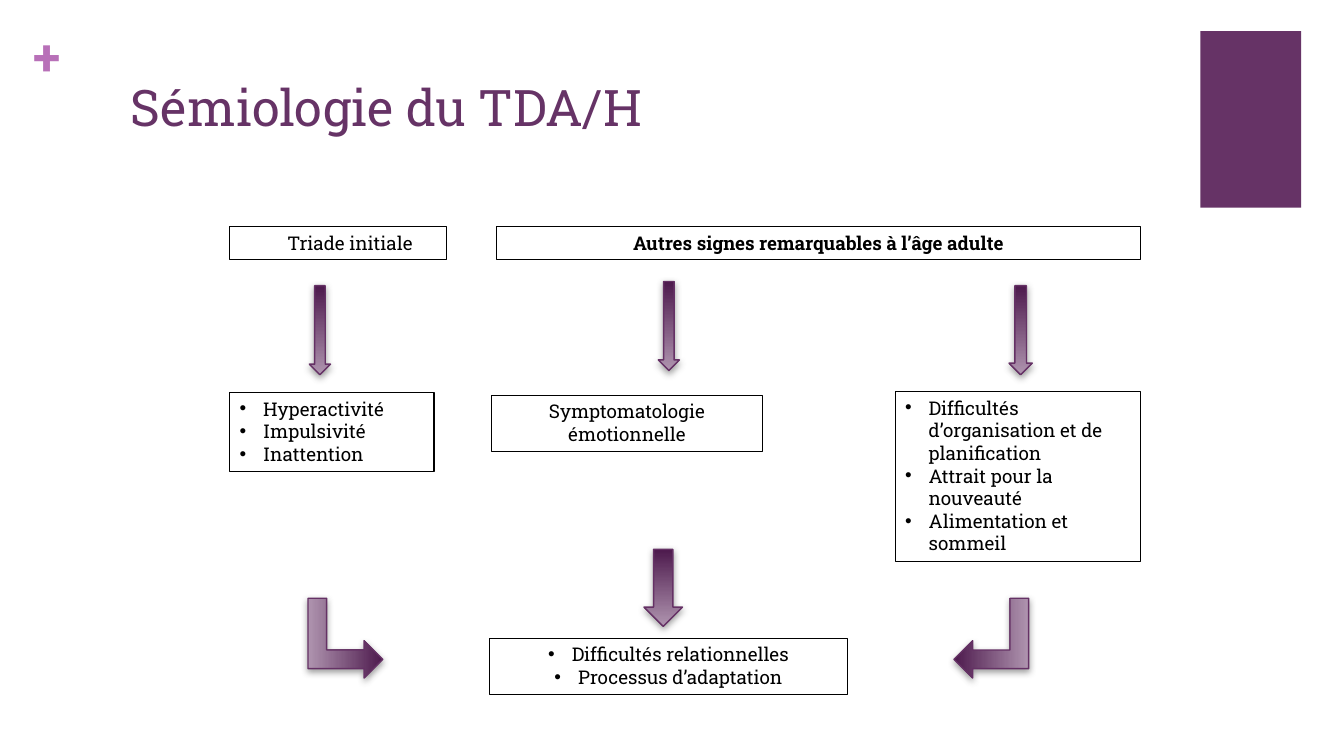
import pptx
import pptx.dml.color
import pptx.enum.shapes
import pptx.enum.text
import pptx.oxml
import pptx.oxml.ns
import pptx.util
from lxml import etree

Pt = pptx.util.Pt
RGB = pptx.dml.color.RGBColor.from_string
SHAPE = pptx.enum.shapes.MSO_SHAPE
ALIGN = pptx.enum.text.PP_ALIGN
AUTO = pptx.enum.text.MSO_AUTO_SIZE
qn = pptx.oxml.ns.qn

theme = {
    "font": "Roboto Slab", "title_size": 36, "body_size": 13.5,
    "purple": "663366", "plus": "B870B8", "black": "000000",
    "dark": "4D1A4D", "light": "AF94AF", "edge": "653165", "shadow": "808080",
}


def add_text(at, lines, size, color, bold=False, align=ALIGN.LEFT,
             bullets=False, indent=0, wrap=True):
    sp = slide.shapes.add_textbox(*map(Pt, at))
    tf = sp.text_frame
    tf.word_wrap = wrap
    tf.text = "\n".join(lines)
    for p in tf.paragraphs:
        p.alignment = align
        p.font.name = theme["font"]
        p.font.size = Pt(size)
        p.font.bold = bold
        p.font.color.rgb = RGB(color)
        pPr = p._p.get_or_add_pPr()
        pPr.set("marL", str(Pt(indent)))
        if bullets:
            pPr.set("indent", str(-Pt(indent)))
            bullet_font = etree.Element(qn("a:buFont"), typeface="Arial")
            bullet = etree.Element(qn("a:buChar"), char="•")
            pPr.insert(0, bullet_font)
            pPr.insert(1, bullet)
    return sp


def add_arrow(kind, at, rotation=0, flip=False):
    sp = slide.shapes.add_shape(kind, *map(Pt, at))
    sp.rotation = rotation
    if flip:
        sp.element.spPr.xfrm.set("flipV", "1")
    sp.fill.gradient()
    sp.fill.gradient_angle = 270
    for stop, name in zip(sp.fill.gradient_stops, ("dark", "light")):
        stop.color.rgb = RGB(theme[name])
    sp.line.color.rgb = RGB(theme["edge"])
    sp.line.width = Pt(1)
    sp.shadow.inherit = False
    effects = sp.element.spPr.find(qn("a:effectLst"))
    shadow = etree.SubElement(effects, qn("a:outerShdw"), blurRad=str(Pt(5)),
                              dist=str(Pt(2)), dir="5400000", rotWithShape="0")
    color = etree.SubElement(shadow, qn("a:srgbClr"), val=theme["shadow"])
    etree.SubElement(color, qn("a:alpha"), val="75000")


prs = pptx.Presentation()
prs.slide_width, prs.slide_height = Pt(960), Pt(540)
slide = prs.slides.add_slide(prs.slide_layouts[6])

# Corner block and plus sign
sp = slide.shapes.add_shape(SHAPE.RECTANGLE, Pt(857.5), Pt(22.3), Pt(72), Pt(126))
sp.fill.solid()
sp.fill.fore_color.rgb = RGB(theme["purple"])
sp.line.fill.background()
sp.shadow.inherit = False

sp = add_text((23.8, 18, 27.4, 43.9), ["+"], theme["title_size"], theme["plus"],
              bold=True, wrap=False)
tf = sp.text_frame
tf.margin_left = tf.margin_top = tf.margin_right = tf.margin_bottom = 0

# Title
add_text((86.4, 51.1, 696.2, 78.5), ["Sémiologie du TDA/H"],
         theme["title_size"], theme["purple"])

# Framed boxes: headings, signs, consequences
centred = {"align": ALIGN.CENTER}
listed = {"bullets": True, "indent": 16.9}
boxes = [
    ((164, 161.8, 155, 23.8), ["Triade initiale"], {**centred, "indent": 17}),
    ((354.6, 161.6, 460, 23.8), ["Autres signes remarquables à l’âge adulte"],
     {**centred, "bold": True}),
    ((164, 280.2, 146, 56.3), ["Hyperactivité", "Impulsivité", "Inattention"], listed),
    ((351, 282.2, 193.6, 40.2), ["Symptomatologie émotionnelle"], centred),
    ((639.4, 279.4, 175.2, 121.7),
     ["Difficultés d’organisation et de planification",
      "Attrait pour la nouveauté", "Alimentation et sommeil"], listed),
    ((349.6, 455.8, 255.8, 40.2),
     ["Difficultés relationnelles", "Processus d’adaptation"], {**centred, **listed}),
]
for at, lines, style in boxes:
    sp = add_text(at, lines, theme["body_size"], theme["black"], **style)
    sp.text_frame.auto_size = AUTO.SHAPE_TO_FIT_TEXT
    sp.line.color.rgb = RGB(theme["black"])
    sp.line.width = Pt(0.75)

# Straight arrows
for at in [(221, 204.1, 15.1, 63.6), (470.2, 201.1, 15.1, 63.6),
           (720.8, 204.1, 16.6, 63.6), (460, 392.4, 27.5, 55)]:
    add_arrow(SHAPE.DOWN_ARROW, at)

# Bent arrows pointing to the consequences
for left, flip in ((218.2, False), (679.6, True)):
    add_arrow(SHAPE.BENT_UP_ARROW, (left, 429.1, 57, 53.4), rotation=90, flip=flip)

prs.save("out.pptx")
